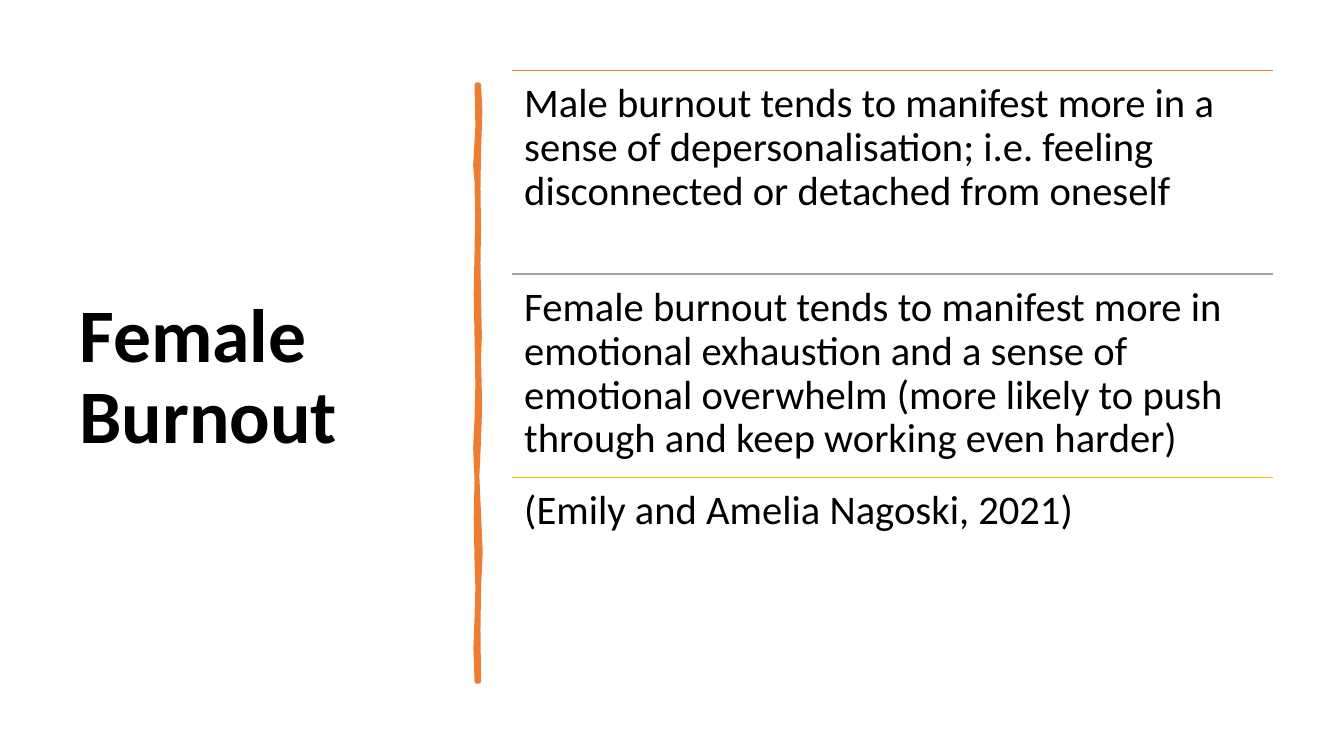
from dataclasses import dataclass
from lxml.etree import SubElement
from pptx import Presentation
from pptx.dml.color import RGBColor as RGB
from pptx.enum.shapes import MSO_CONNECTOR as Connector
from pptx.enum.text import MSO_ANCHOR as Anchor
from pptx.oxml.ns import qn
from pptx.util import Pt

HEADING = "Female Burnout"
POINTS = [
    ("Male burnout tends to manifest more in a sense of depersonalisation; "
     "i.e. feeling disconnected or detached from oneself", "ED7D31"),
    ("Female burnout tends to manifest more in emotional exhaustion and a sense of "
     "emotional overwhelm (more likely to push through and keep working even harder)", "A5A5A5"),
    ("(Emily and Amelia Nagoski, 2021)", "FFC000"),
]
RIGHT_EDGE = [(342, 60.5), (343, 80), (342, 107), (341.6, 135), (342, 163), (341.6, 188),
              (342, 212), (342.6, 240), (342, 256), (342.8, 290), (342, 314), (340.8, 340),
              (342, 367), (343.2, 394), (342, 420), (341.6, 450), (342, 486.7)]
LEFT_EDGE = [(340.6, 486.7), (339.8, 463), (340.6, 441), (341.2, 420), (340.6, 401),
             (340, 370), (340.6, 343), (339.6, 320), (340.6, 299), (341.2, 275),
             (340.6, 241), (340, 210), (340.6, 180), (341, 155), (340.6, 130),
             (339.6, 118), (341.2, 90), (340.6, 60.5)]


@dataclass(frozen=True)
class Theme:
    font: str = "Calibri"
    ink: RGB = RGB(0, 0, 0)
    paper: RGB = RGB(255, 255, 255)
    accent: RGB = RGB.from_string("ED7D31")
    heading_size: float = 54
    body_size: float = 29
    rule_width: float = 1
    divider_width: float = 3.25


THEME = Theme()
ROW_LEFT, ROW_TOP, ROW_WIDTH, ROW_HEIGHT = 365.76, 50.4, 543.6, 145.4
ROW_INSET = 8.7


def add_words(slide, words, box, size, bold=False, anchor=Anchor.TOP, inset=None):
    frame = slide.shapes.add_textbox(*map(Pt, box)).text_frame
    frame.word_wrap = True
    frame.vertical_anchor = anchor
    if inset is not None:
        frame.margin_left = frame.margin_right = Pt(inset)
        frame.margin_top = frame.margin_bottom = Pt(inset)
    line = frame.paragraphs[0]
    line.text = words
    line.line_spacing = 0.9
    line.font.name, line.font.size, line.font.bold = THEME.font, Pt(size), bold
    line.font.color.rgb = THEME.ink


def add_divider(slide):
    outline = [(Pt(x), Pt(y)) for x, y in RIGHT_EDGE + LEFT_EDGE]
    builder = slide.shapes.build_freeform(*outline[0])
    builder.add_line_segments(outline[1:], close=True)
    divider = builder.convert_to_shape()
    divider.shadow.inherit = False
    divider.fill.solid()
    divider.fill.fore_color.rgb = THEME.accent
    divider.line.color.rgb = THEME.accent
    divider.line.width = Pt(THEME.divider_width)
    SubElement(divider.line._get_or_add_ln(), qn("a:round"))


def add_rule(slide, top, color):
    rule = slide.shapes.add_connector(
        Connector.STRAIGHT, Pt(ROW_LEFT), Pt(top), Pt(ROW_LEFT + ROW_WIDTH), Pt(top))
    rule.line.color.rgb = RGB.from_string(color)
    rule.line.width = Pt(THEME.rule_width)
    SubElement(rule._element.spPr, qn("a:effectLst"))


def main():
    deck = Presentation()
    deck.slide_width, deck.slide_height = Pt(960), Pt(540)
    slide = deck.slides.add_slide(deck.slide_layouts[6])
    slide.background.fill.solid()
    slide.background.fill.fore_color.rgb = THEME.paper
    add_words(slide, HEADING, (49.7, 50.4, 269.3, 439.9), THEME.heading_size,
              bold=True, anchor=Anchor.MIDDLE)
    add_divider(slide)
    for row, (words, color) in enumerate(POINTS):
        top = ROW_TOP + row * ROW_HEIGHT
        add_rule(slide, top, color)
        add_words(slide, words, (ROW_LEFT, top, ROW_WIDTH, ROW_HEIGHT),
                  THEME.body_size, inset=ROW_INSET)
    deck.save("out.pptx")


if __name__ == "__main__":
    main()
